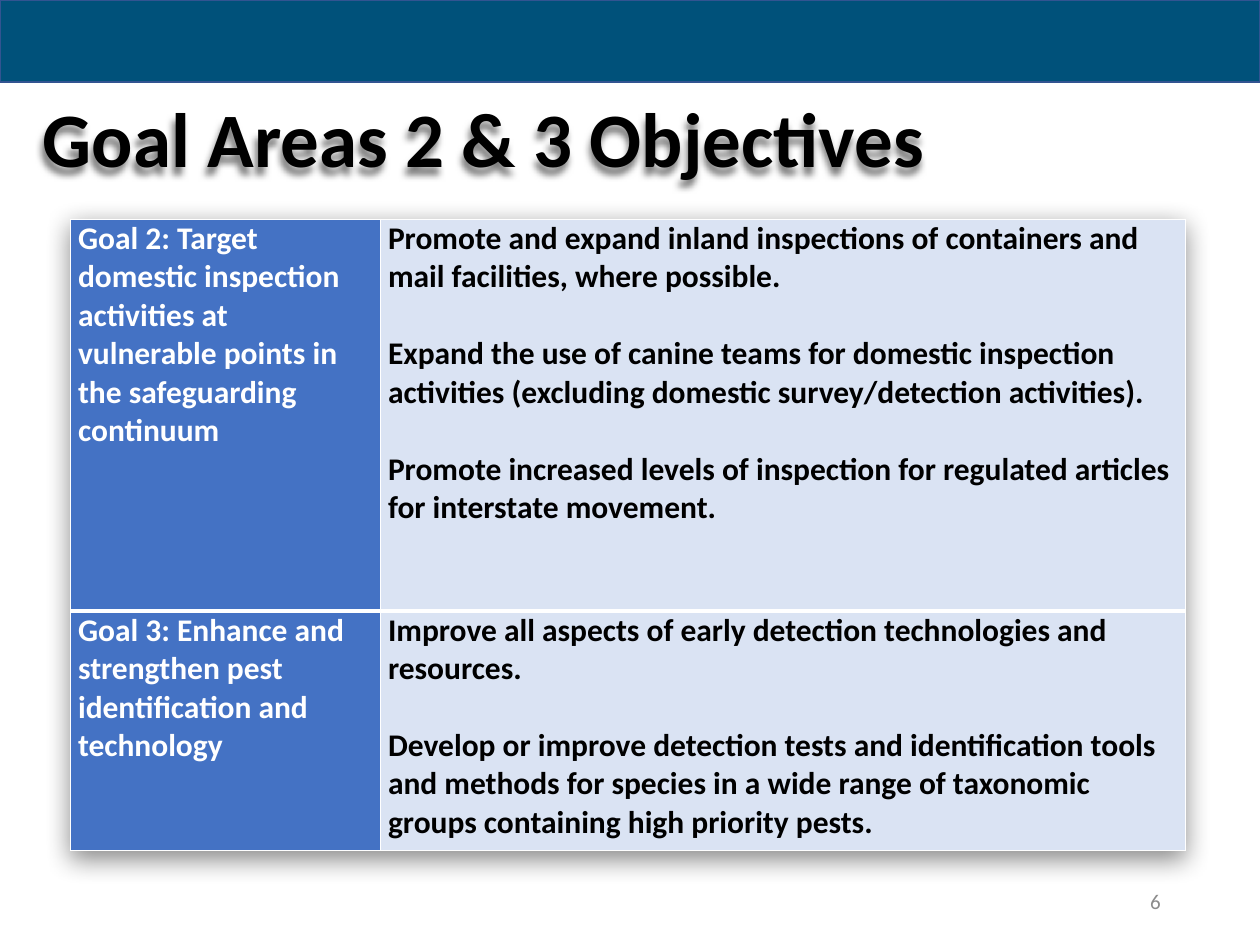
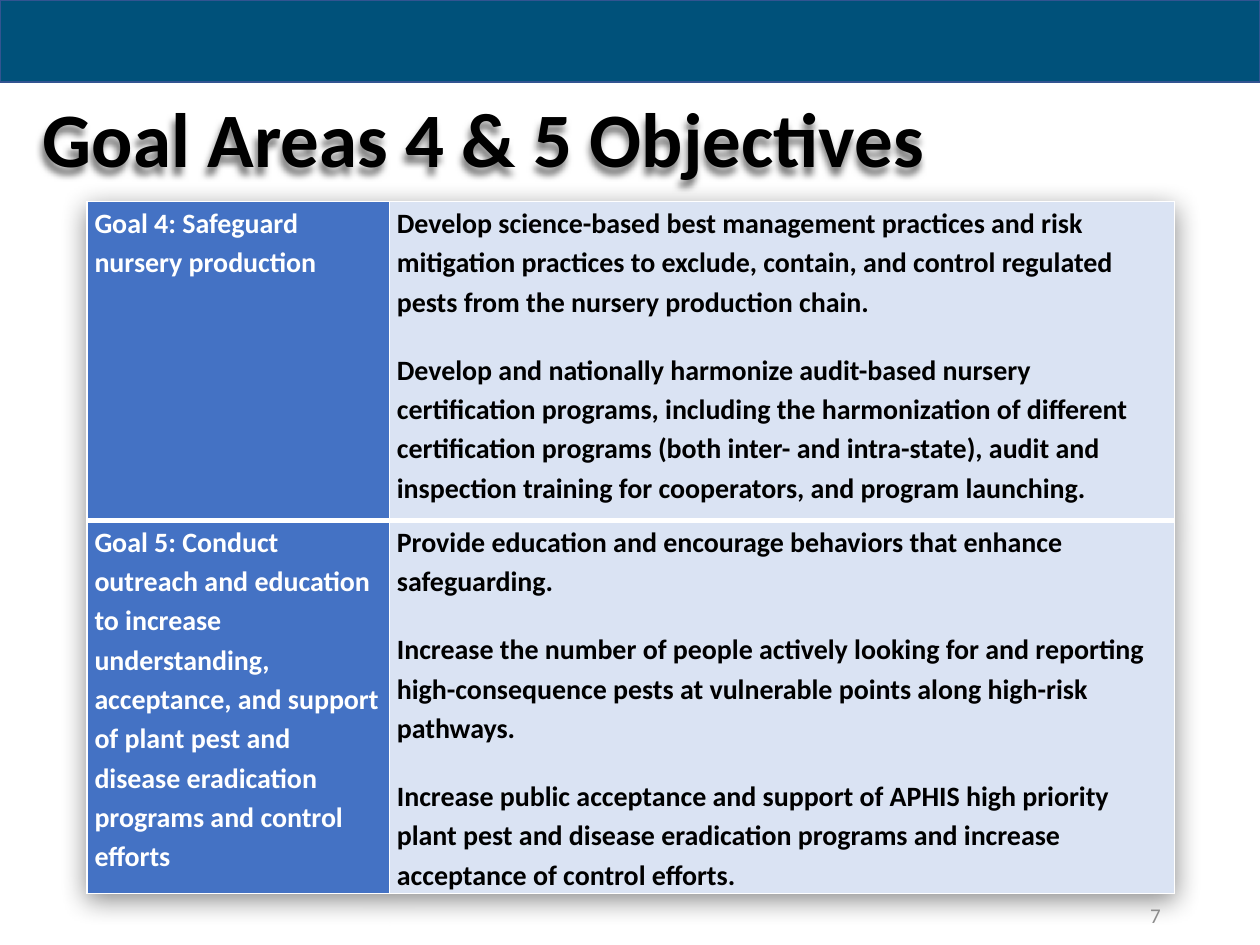
import pptx
import pptx.util
import pptx.dml.color
import pptx.enum.shapes
import pptx.enum.text
import pptx.oxml
import pptx.oxml.ns

Inches, Pt = pptx.util.Inches, pptx.util.Pt
RGBColor = pptx.dml.color.RGBColor
PP_ALIGN, MSO_ANCHOR = pptx.enum.text.PP_ALIGN, pptx.enum.text.MSO_ANCHOR

FIRST_PAGE = 6
SLIDES = [
    {
        "title": "Goal Areas 2 & 3 Objectives",
        "table_at": (0.56, 1.74), "cols": (2.46, 6.39), "rows": (3.11, 1.9),
        "size": 18, "spacing": 1.0, "gap": 22, "page_top": 6.95,
        "goals": [
            ("Goal 2: Target domestic inspection activities at vulnerable points in the "
             "safeguarding continuum",
             ["Promote and expand inland inspections of containers and mail facilities, "
              "where possible.",
              "Expand the use of canine teams for domestic inspection activities "
              "(excluding domestic survey/detection activities).",
              "Promote increased levels of inspection for regulated articles for "
              "interstate movement."]),
            ("Goal 3: Enhance and strengthen pest identification and technology",
             ["Improve all aspects of early detection technologies and resources.",
              "Develop or improve detection tests and identification tools and methods for "
              "species in a wide range of taxonomic groups containing high priority pests."]),
        ],
    },
    {
        "title": "Goal Areas 4 & 5 Objectives",
        "table_at": (0.69, 1.6), "cols": (2.4, 6.23), "rows": (2.53, 2.96),
        "size": 16, "spacing": 1.15, "gap": 16.5, "page_top": 7.06,
        "goals": [
            ("Goal 4: Safeguard nursery production",
             ["Develop science-based best management practices and risk mitigation practices "
              "to exclude, contain, and control regulated pests from the nursery production "
              "chain.",
              "Develop and nationally harmonize audit-based nursery certification programs, "
              "including the harmonization of different certification programs (both inter- "
              "and intra-state), audit and inspection training for cooperators, and program "
              "launching."]),
            ("Goal 5: Conduct outreach and education to increase understanding, acceptance, "
             "and support of plant pest and disease eradication programs and control efforts",
             ["Provide education and encourage behaviors that enhance safeguarding.",
              "Increase the number of people actively looking for and reporting "
              "high-consequence pests at vulnerable points along high-risk pathways.",
              "Increase public acceptance and support of APHIS high priority plant pest and "
              "disease eradication programs and increase acceptance of control efforts."]),
        ],
    },
]

FONT = "Calibri"
BLACK = RGBColor(0x00, 0x00, 0x00)
WHITE = RGBColor(0xFF, 0xFF, 0xFF)
GREY = RGBColor(0x8C, 0x8C, 0x8C)
BAND = RGBColor(0x00, 0x51, 0x7A)
BAND_LINE = RGBColor(0x32, 0x54, 0x91)
GOAL_FILL = RGBColor(0x44, 0x72, 0xC4)
OBJECTIVE_FILL = RGBColor(0xDA, 0xE3, 0xF3)


def write(tf, paragraphs, size, color, bold=False, align=PP_ALIGN.LEFT, spacing=1.0, gap=0):
    for i, text in enumerate(paragraphs):
        p = tf.paragraphs[0] if i == 0 else tf.add_paragraph()
        p.alignment = align
        p.line_spacing = spacing
        p.space_before = Pt(gap if i else 0)
        r = p.add_run()
        r.text = text
        r.font.name, r.font.size, r.font.bold = FONT, Pt(size), bold
        r.font.color.rgb = color


def shadow(blur, distance, angle, alpha):
    """Return an effect list with one black outer shadow (points, degrees, percent)."""
    return pptx.oxml.parse_xml(
        f'<a:effectLst {pptx.oxml.ns.nsdecls("a")}>'
        f'<a:outerShdw blurRad="{Pt(blur)}" dist="{Pt(distance)}" dir="{angle * 60000}" '
        f'algn="t" rotWithShape="0"><a:srgbClr val="{BLACK}">'
        f'<a:alpha val="{alpha * 1000}"/></a:srgbClr></a:outerShdw></a:effectLst>')


def set_borders(cell, **widths):
    """Draw white borders; they come before the fill in the cell's XML."""
    tcPr = cell._tc.get_or_add_tcPr()
    for i, (side, width) in enumerate(widths.items()):
        tcPr.insert(i, pptx.oxml.parse_xml(
            f'<a:ln{side} {pptx.oxml.ns.nsdecls("a")} w="{Pt(width)}"><a:solidFill>'
            f'<a:srgbClr val="{WHITE}"/></a:solidFill></a:ln{side}>'))


def add_band(slide, width):
    sp = slide.shapes.add_shape(pptx.enum.shapes.MSO_SHAPE.RECTANGLE, 0, 0, width, Inches(0.65))
    sp.shadow.inherit = False
    sp.fill.solid()
    sp.fill.fore_color.rgb = BAND
    sp.line.color.rgb = BAND_LINE
    sp.line.width = Pt(1)


def add_title(slide, text):
    sp = slide.shapes.title
    sp.left, sp.top, sp.width, sp.height = map(Inches, (0.24, 0.74, 9.49, 0.79))
    tf = sp.text_frame
    tf.auto_size = pptx.enum.text.MSO_AUTO_SIZE.NONE
    tf.vertical_anchor = MSO_ANCHOR.MIDDLE
    write(tf, [text], 44, BLACK, bold=True, spacing=0.9)
    sp._element.spPr.append(shadow(4, 4, 120, 50))


def add_goal_table(slide, data):
    goals, cols, rows = data["goals"], data["cols"], data["rows"]
    frame = slide.shapes.add_table(len(rows), len(cols), *map(
        Inches, (*data["table_at"], sum(cols), sum(rows))))
    table = frame.table
    table.first_row = table.horz_banding = False
    table._tbl.tblPr.insert(0, shadow(15, 4, 90, 45))
    for column, width in zip(table.columns, cols):
        column.width = Inches(width)
    for i, (goal, objectives) in enumerate(goals):
        table.rows[i].height = Inches(rows[i])
        parts = [([goal], WHITE, GOAL_FILL), (objectives, BLACK, OBJECTIVE_FILL)]
        for cell, (texts, color, fill) in zip(table.rows[i].cells, parts):
            cell.margin_left = cell.margin_right = Inches(0.06)
            cell.margin_top = cell.margin_bottom = 0
            cell.fill.solid()
            cell.fill.fore_color.rgb = fill
            set_borders(cell, L=1, R=1, T=3 if i else 1, B=1 if i == len(goals) - 1 else 3)
            write(cell.text_frame, texts, data["size"], color, bold=True,
                  spacing=data["spacing"], gap=data["gap"])


def add_page_number(slide, number, top):
    sp = slide.shapes.add_textbox(*map(Inches, (7.06, top, 2.25, 0.4)))
    sp.text_frame.word_wrap = True
    sp.text_frame.vertical_anchor = MSO_ANCHOR.MIDDLE
    write(sp.text_frame, [str(number)], 12, GREY, align=PP_ALIGN.RIGHT)


def main():
    prs = pptx.Presentation()
    prs.slide_width, prs.slide_height = Inches(10), Inches(7.5)
    title_only = prs.slide_layouts.get_by_name("Title Only")
    for number, data in enumerate(SLIDES, FIRST_PAGE):
        slide = prs.slides.add_slide(title_only)
        add_band(slide, prs.slide_width)
        add_title(slide, data["title"])
        add_goal_table(slide, data)
        add_page_number(slide, number, data["page_top"])
    prs.save("out.pptx")


if __name__ == "__main__":
    main()
